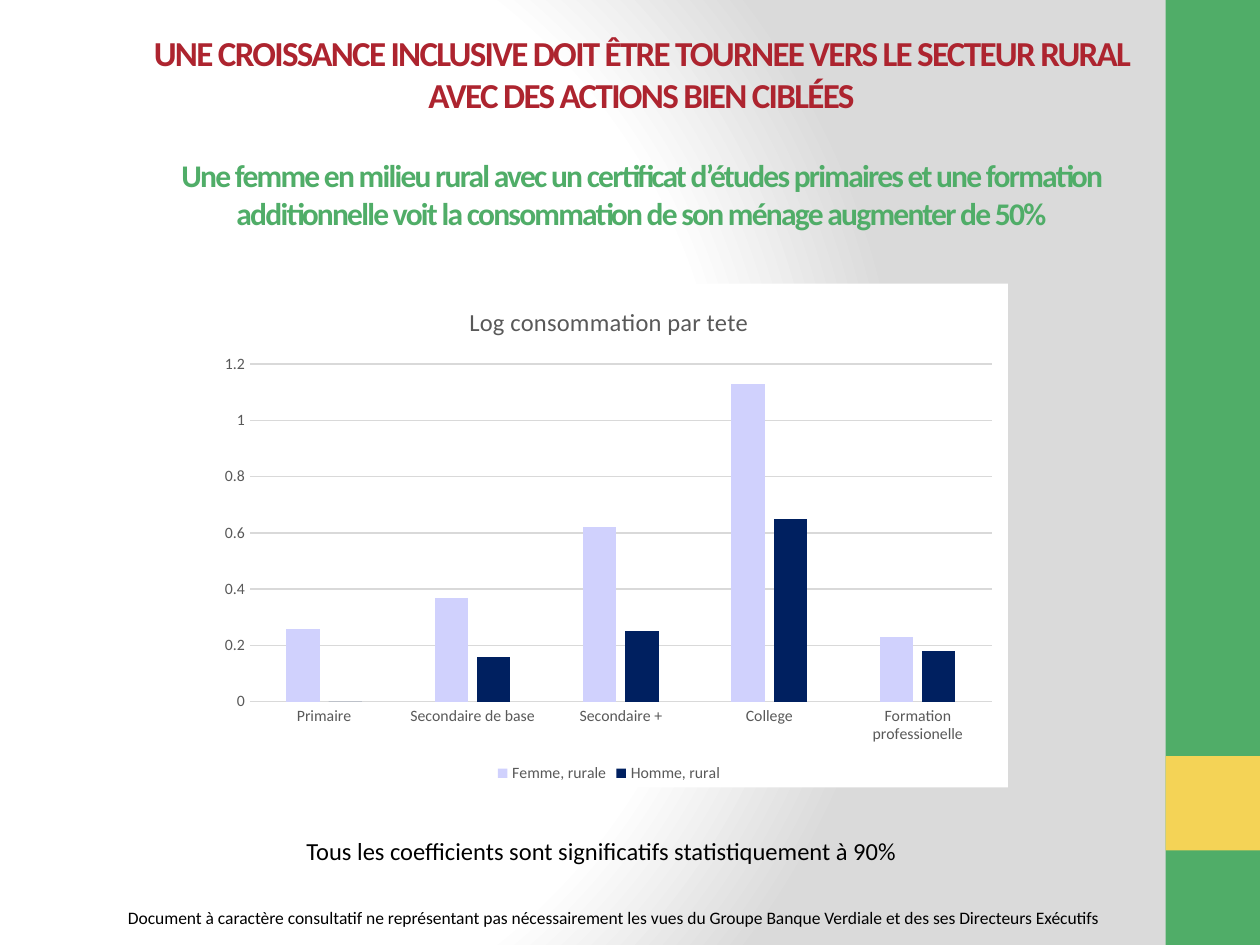
"""Build the slide on inclusive growth in rural areas, with its column chart."""
import lxml.etree
import pptx
import pptx.chart.data
import pptx.dml.color
import pptx.enum.chart
import pptx.enum.shapes
import pptx.enum.text
import pptx.oxml
import pptx.oxml.ns
import pptx.util

Pt = pptx.util.Pt
RGB = pptx.dml.color.RGBColor.from_string
theme = {
    "font": "Calibri", "green": "50AD68", "gold": "F4D356", "red": "AD242F",
    "black": "000000", "white": "FFFFFF", "shade": "DADADA", "gray": "595959",
    "grid": "D9D9D9", "women": "D0D1FD", "men": "002060",
    "head": 20, "sub": 18, "note": 14, "foot": 10, "tick": 9,
}


def style(font, size, color, bold=False):
    """Set face, size, colour and weight of a font."""
    font.name = theme["font"]
    font.size = Pt(theme[size])
    font.color.rgb = RGB(theme[color])
    font.bold = bold


def add_box(left, top, width, height, wrap=False):
    """Add a text box and return its frame."""
    frame = slide.shapes.add_textbox(Pt(left), Pt(top), Pt(width), Pt(height)).text_frame
    frame.word_wrap = wrap
    return frame


deck = pptx.Presentation()
deck.slide_width, deck.slide_height = Pt(720), Pt(540)
slide = deck.slides.add_slide(deck.slide_layouts[6])

fill = slide.background.fill
fill.gradient()
grad = slide.background._cSld.bg.bgPr.find(pptx.oxml.ns.qn("a:gradFill"))
stops = "".join(
    f'<a:gs pos="{pos}"><a:srgbClr val="{theme[color]}"/></a:gs>'
    for pos, color in ((0, "white"), (75000, "white"), (100000, "shade"))
)
grad.getparent().replace(grad, pptx.oxml.parse_xml(
    f'<a:gradFill {pptx.oxml.ns.nsdecls("a")} rotWithShape="1"><a:gsLst>{stops}</a:gsLst>'
    '<a:path path="circle"><a:fillToRect l="20000" t="50000" r="100000" b="50000"/>'
    '</a:path></a:gradFill>'
))

for top, height, color in ((0, 540, "green"), (432, 54, "gold")):
    band = slide.shapes.add_shape(
        pptx.enum.shapes.MSO_SHAPE.RECTANGLE, Pt(666), Pt(top), Pt(54), Pt(height))
    band.shadow.inherit = False
    band.fill.solid()
    band.fill.fore_color.rgb = RGB(theme[color])
    band.line.fill.background()

title = add_box(70.5, 14.5, 592, 123, wrap=True)
title.text = (
    "UNE CROISSANCE INCLUSIVE DOIT ÊTRE TOURNEE VERS LE SECTEUR RURAL "
    "AVEC DES ACTIONS BIEN CIBLÉES\n"
    "Une femme en milieu rural avec un certificat d’études primaires et une formation "
    "additionnelle voit la consommation de son ménage augmenter de 50%"
)
for par, size, color in zip(title.paragraphs, ("head", "sub"), ("red", "green")):
    par.alignment = pptx.enum.text.PP_ALIGN.CENTER
    for run in par.runs:
        style(run.font, size, color, bold=True)
        run._r.get_or_add_rPr().set("spc", "-100")
title.paragraphs[1].space_before = Pt(23)

notes = (
    (168, 474, 372, 24, "note", "Tous les coefficients sont significatifs statistiquement à 90%"),
    (66, 515, 636, 19, "foot",
     "Document à caractère consultatif ne représentant pas nécessairement les vues "
     "du Groupe Banque Verdiale et des ses Directeurs Exécutifs"),
)
for left, top, width, height, size, text in notes:
    note = add_box(left, top, width, height)
    note.text = text
    style(note.paragraphs[0].runs[0].font, size, "black")

data = pptx.chart.data.CategoryChartData()
data.categories = [
    "Primaire", "Secondaire de base", "Secondaire +", "College", "Formation professionelle"]
data.add_series("Femme, rurale", (0.26, 0.37, 0.62, 1.13, 0.23))
data.add_series("Homme, rural", (0, 0.16, 0.25, 0.65, 0.18))
chart = slide.shapes.add_chart(
    pptx.enum.chart.XL_CHART_TYPE.COLUMN_CLUSTERED,
    Pt(120), Pt(162), Pt(456), Pt(288), data).chart
style(chart.font, "foot", "black")

chart.has_title = True
head = chart.chart_title.text_frame
head.text = "Log consommation par tete"
style(head.paragraphs[0].runs[0].font, "note", "gray")
chart.chart_title.include_in_layout = False

chart.has_legend = True
chart.legend.position = pptx.enum.chart.XL_LEGEND_POSITION.BOTTOM
chart.legend.include_in_layout = False
style(chart.legend.font, "tick", "gray")

plot = chart.plots[0]
plot.vary_by_categories = False
plot.gap_width, plot.overlap = 219, -27
for series, color in zip(plot.series, ("women", "men")):
    series.format.fill.solid()
    series.format.fill.fore_color.rgb = RGB(theme[color])
    series.invert_if_negative = False

cats, vals = chart.category_axis, chart.value_axis
for axis in (cats, vals):
    axis.major_tick_mark = axis.minor_tick_mark = pptx.enum.chart.XL_TICK_MARK.NONE
    style(axis.tick_labels.font, "tick", "gray")
vals.minimum_scale, vals.maximum_scale, vals.major_unit = 0, 1.2, 0.2
vals.format.line.fill.background()
for line in (cats.format.line, vals.major_gridlines.format.line):
    line.color.rgb = RGB(theme["grid"])
    line.width = Pt(0.75)

space = chart._chartSpace
space.chart.addnext(pptx.oxml.parse_xml(
    f'<c:spPr {pptx.oxml.ns.nsdecls("c", "a")}><a:solidFill><a:srgbClr val="{theme["white"]}"/>'
    '</a:solidFill><a:ln><a:noFill/></a:ln></c:spPr>'
))
area = space.chart.plotArea
for old in area.findall(pptx.oxml.ns.qn("c:layout")):
    area.remove(old)
frame = "".join(
    f'<c:{tag} val="{val}"/>' for tag, val in (
        ("layoutTarget", "inner"), ("xMode", "edge"), ("yMode", "edge"),
        ("x", 0.05), ("y", 0.16), ("w", 0.93), ("h", 0.67))
)
area.insert(0, pptx.oxml.parse_xml(
    f'<c:layout {pptx.oxml.ns.nsdecls("c")}><c:manualLayout>{frame}</c:manualLayout></c:layout>'
))

deck.save("out.pptx")
